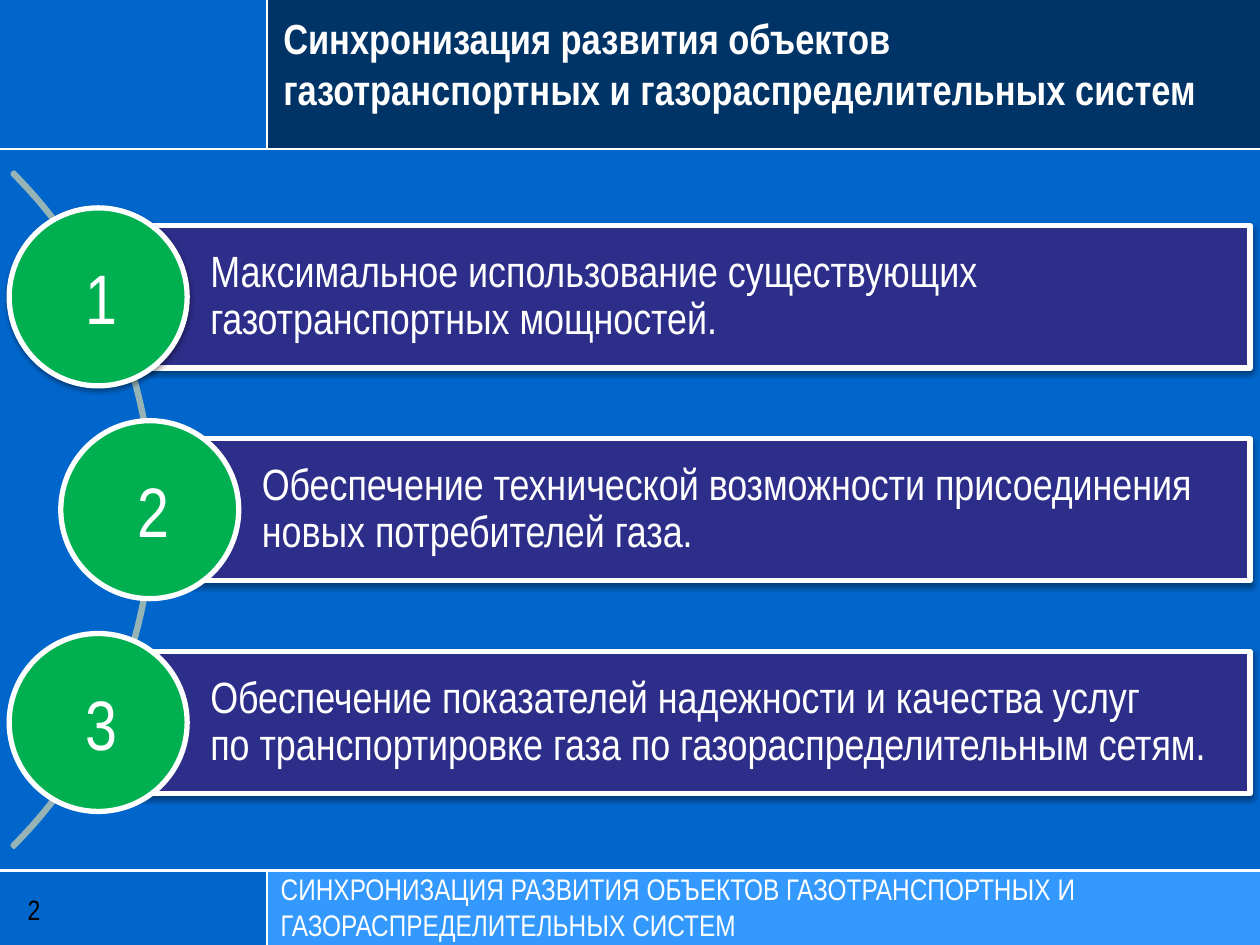
from dataclasses import dataclass

from lxml import etree
from pptx import Presentation
from pptx.dml.color import RGBColor
from pptx.enum.shapes import MSO_CONNECTOR, MSO_SHAPE
from pptx.enum.text import MSO_ANCHOR, MSO_AUTO_SIZE, PP_ALIGN
from pptx.oxml.ns import qn
from pptx.util import Cm, Pt

RECTANGLE, OVAL, BLOCK_ARC = MSO_SHAPE.RECTANGLE, MSO_SHAPE.OVAL, MSO_SHAPE.BLOCK_ARC
STRAIGHT = MSO_CONNECTOR.STRAIGHT
TOP, MIDDLE = MSO_ANCHOR.TOP, MSO_ANCHOR.MIDDLE
LEFT, CENTER = PP_ALIGN.LEFT, PP_ALIGN.CENTER
NO_AUTO_SIZE = MSO_AUTO_SIZE.NONE


@dataclass(frozen=True)
class Theme:
    font: str = "Arial Narrow"
    background: str = "0066CC"
    header: str = "003366"
    footer: str = "3399FF"
    bar: str = "2D2D8A"
    circle: str = "00B050"
    arc: str = "96B3B6"
    light: str = "FFFFFF"
    dark: str = "000000"
    title_size: float = 24
    footer_size: float = 17
    page_size: float = 16
    item_size: float = 25
    number_size: float = 40


THEME = Theme()
SLIDE_WIDTH, SLIDE_HEIGHT = 25.4, 19.05
SIDE_WIDTH = 5.38
HEADER_HEIGHT = 3
FOOTER_TOP = 17.55
DEFAULT_INSETS = (0.25, 0.13, 0.25, 0.13)

TITLE = "Синхронизация развития объектов\vгазотранспортных и газораспределительных систем"
FOOTER = "СИНХРОНИЗАЦИЯ РАЗВИТИЯ ОБЪЕКТОВ ГАЗОТРАНСПОРТНЫХ И ГАЗОРАСПРЕДЕЛИТЕЛЬНЫХ СИСТЕМ"
# Text, indent of the row, whether its circle casts a shadow
ITEMS = [
    ("Максимальное использование существующих газотранспортных мощностей.", 0, True),
    ("Обеспечение технической возможности присоединения новых потребителей газа.", 1.04, False),
    ("Обеспечение показателей надежности и качества услуг\v"
     "по транспортировке газа по газораспределительным сетям.", 0, False),
]


def write_text(shape, text, size, color=THEME.light, bold=False, align=LEFT,
               anchor=TOP, insets=DEFAULT_INSETS, line_spacing=None):
    frame = shape.text_frame
    frame.word_wrap = True
    frame.auto_size = NO_AUTO_SIZE
    frame.vertical_anchor = anchor
    (frame.margin_left, frame.margin_top,
     frame.margin_right, frame.margin_bottom) = [Cm(inset) for inset in insets]
    paragraph = frame.paragraphs[0]
    paragraph.text = text
    paragraph.alignment = align
    if line_spacing:
        paragraph.line_spacing = line_spacing
    for run in paragraph.runs:
        run.font.name = THEME.font
        run.font.size = Pt(size)
        run.font.bold = bold
        run.font.color.rgb = RGBColor.from_string(color)


def add_panel(slide, kind, box, fill=None, line=None, line_width=3):
    shape = slide.shapes.add_shape(kind, *[Cm(length) for length in box])
    shape.shadow.inherit = False
    if fill:
        shape.fill.solid()
        shape.fill.fore_color.rgb = RGBColor.from_string(fill)
    else:
        shape.fill.background()
    if line:
        shape.line.color.rgb = RGBColor.from_string(line)
        shape.line.width = Pt(line_width)
    else:
        shape.line.fill.background()
    return shape


def add_text_box(slide, box, text, size, **text_format):
    text_box = slide.shapes.add_textbox(*[Cm(length) for length in box])
    write_text(text_box, text, size, **text_format)


def add_rule(slide, *ends):
    rule = slide.shapes.add_connector(STRAIGHT, *[Cm(end) for end in ends])
    rule.line.color.rgb = RGBColor.from_string(THEME.light)
    rule.line.width = Pt(1.25)
    etree.SubElement(rule.element.spPr, qn("a:effectLst"))


def add_shadow(shape):
    effects = shape.element.spPr.find(qn("a:effectLst"))
    shadow = etree.SubElement(effects, qn("a:outerShdw"), blurRad=str(Pt(3.1)),
                              dist=str(Pt(1.6)), dir="5400000", rotWithShape="0")
    color = etree.SubElement(shadow, qn("a:srgbClr"), val=THEME.dark)
    etree.SubElement(color, qn("a:alpha"), val="38000")


def build_header(slide, left, top, width, height):
    add_panel(slide, RECTANGLE, (left + SIDE_WIDTH, top, width - SIDE_WIDTH, height), THEME.header)
    add_rule(slide, left + SIDE_WIDTH, top, left + SIDE_WIDTH, top + height)
    add_rule(slide, left, top + height, left + width, top + height)
    title = slide.shapes.title
    title.left, title.top = Cm(left + SIDE_WIDTH + 0.08), Cm(top + 0.13)
    title.width, title.height = Cm(width - SIDE_WIDTH - 0.08), Cm(2.31)
    write_text(title, TITLE, THEME.title_size, bold=True)
    # Bring the title in front of its panel
    title.element.getparent().append(title.element)


def build_footer(slide, left, top, width, height):
    add_panel(slide, RECTANGLE, (left + SIDE_WIDTH, top, width - SIDE_WIDTH, height), THEME.footer)
    add_rule(slide, left + SIDE_WIDTH, top, left + SIDE_WIDTH, top + height)
    add_rule(slide, left, top, left + width, top)
    add_text_box(slide, (left + 0.56, top + 0.13, 4.14, 1.32), "2", THEME.page_size,
                 color=THEME.dark, anchor=MIDDLE, insets=(0, 0, 0, 0))
    add_text_box(slide, (left + SIDE_WIDTH + 0.03, top - 0.13, width - SIDE_WIDTH - 0.03, 1.7),
                 FOOTER, THEME.footer_size)


def build_row(slide, left, top, width, height, number, text, circle_shadow):
    bar = add_panel(slide, RECTANGLE, (left, top, width, height), THEME.bar, THEME.light)
    add_shadow(bar)
    write_text(bar, text, THEME.item_size, anchor=MIDDLE,
               insets=(2.26, 0.18, 0.18, 0.18), line_spacing=0.9)
    # The circle is centred on the left edge of the bar
    diameter = 1.25 * height
    circle = add_panel(slide, OVAL, (left - diameter / 2, top + (height - diameter) / 2,
                                     diameter, diameter), THEME.circle, THEME.light)
    if circle_shadow:
        add_shadow(circle)
    write_text(circle, str(number), THEME.number_size, align=CENTER, anchor=MIDDLE,
               insets=(0.13, 0, 0, 0))


def build_list(slide, left, top, width, height):
    # Arc behind the rows, centred on the region
    diameter = 19.25
    arc = add_panel(slide, BLOCK_ARC, (left - 18.13, top + (height - diameter) / 2,
                                       diameter, diameter), line=THEME.arc, line_width=2)
    arc.adjustments[0], arc.adjustments[1], arc.adjustments[2] = 189, 27, 0.003
    # Rows at equal steps
    bar_height = 2.87
    step = (height - bar_height) / (len(ITEMS) - 1)
    for index, (text, indent, circle_shadow) in enumerate(ITEMS):
        build_row(slide, left + indent, top + index * step, width - indent, bar_height,
                  index + 1, text, circle_shadow)


def main():
    presentation = Presentation()
    presentation.slide_width, presentation.slide_height = Cm(SLIDE_WIDTH), Cm(SLIDE_HEIGHT)
    slide = presentation.slides.add_slide(presentation.slide_layouts[5])
    slide.background.fill.solid()
    slide.background.fill.fore_color.rgb = RGBColor.from_string(THEME.background)
    build_footer(slide, 0, FOOTER_TOP, SLIDE_WIDTH, SLIDE_HEIGHT - FOOTER_TOP)
    build_list(slide, 1.98, 4.55, 23.22, 11.45)
    build_header(slide, 0, 0, SLIDE_WIDTH, HEADER_HEIGHT)
    presentation.save("out.pptx")


if __name__ == "__main__":
    main()
